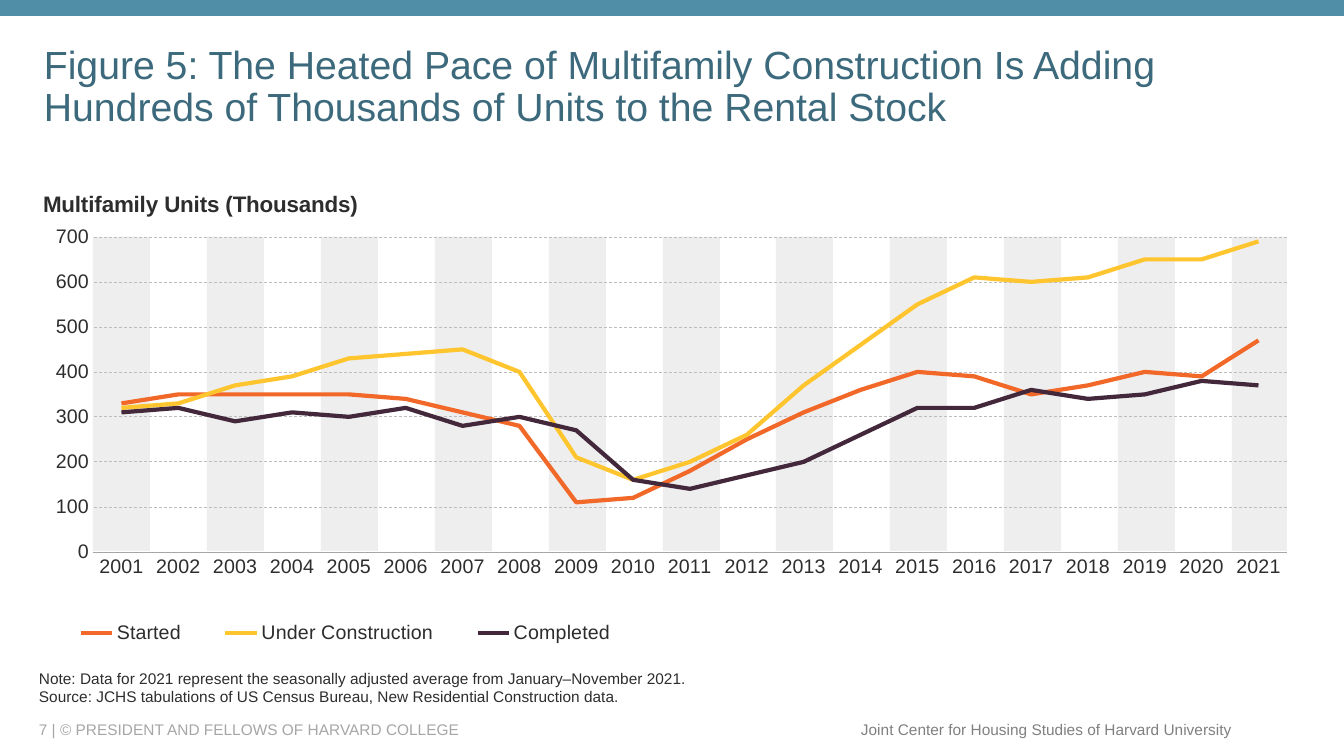
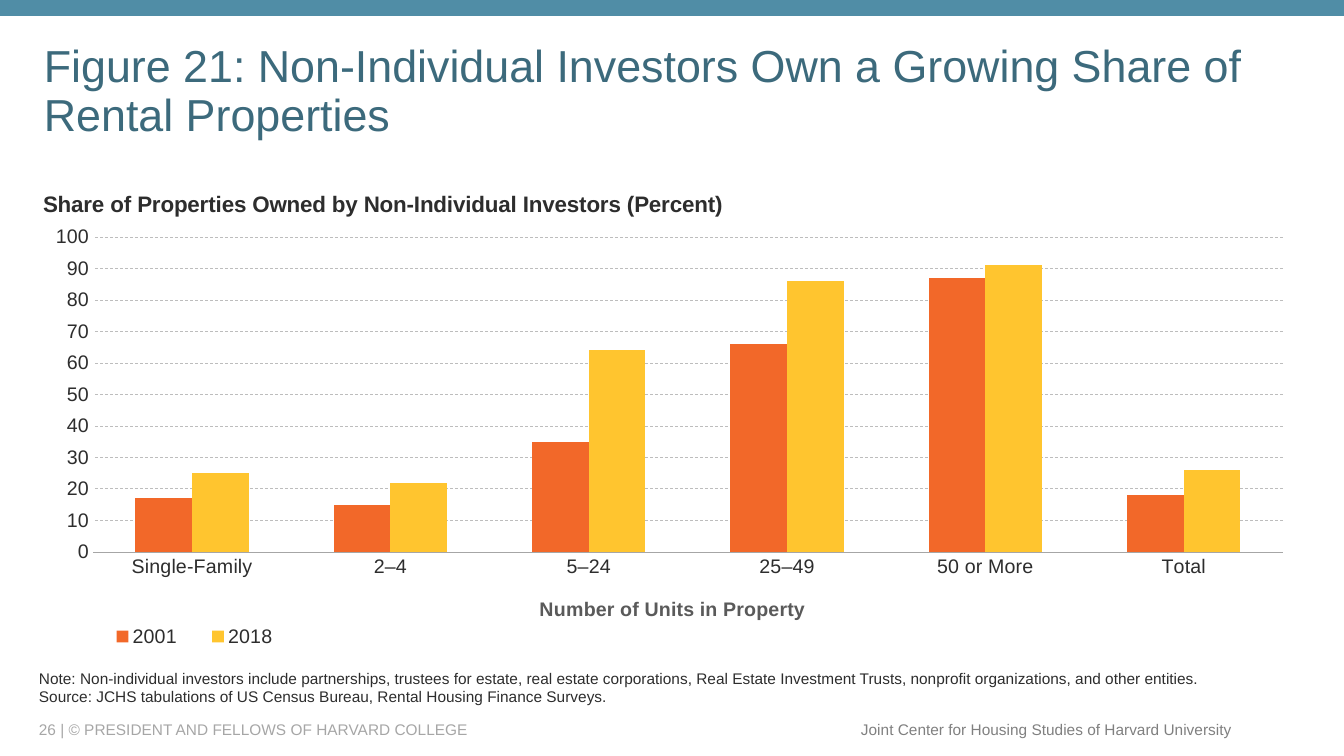
from dataclasses import dataclass

from pptx import Presentation
from pptx.chart.data import CategoryChartData
from pptx.dml.color import RGBColor
from pptx.enum.chart import XL_CHART_TYPE as Kind, XL_LEGEND_POSITION as Spot, XL_TICK_MARK as Tick
from pptx.enum.dml import MSO_LINE as Dash
from pptx.enum.shapes import MSO_SHAPE as Form
from pptx.enum.text import MSO_ANCHOR as Anchor, PP_ALIGN as Align
from pptx.oxml import parse_xml as xml
from pptx.oxml.ns import nsdecls, qn
from pptx.util import Pt

SCALE = 914400 / 100.8


@dataclass(frozen=True)
class Theme:
    face: str = "Arial"
    bar: str = "508DA6"
    title: str = "3C6A7C"
    ink: str = "2D2D2D"
    soft: str = "5A5A5A"
    page: str = "A6A6A6"
    owner: str = "808080"
    axis: str = "A6A6A6"
    grid: str = "BDBDBD"
    band: str = "DEDEDE"
    series: tuple = ("F26829", "FFC52F", "43273B")
    small: int = 11
    base: int = 10
    label: int = 14
    head: int = 16


def px(*nums):
    return [round(n * SCALE) for n in nums]


def apply(item, **vals):
    for key, val in vals.items():
        setattr(item, key, val)


def place(host, prev, box, size, inner=False):
    """Fix a chart part at box (px) inside a chart of the given size (px)."""
    old = host.find(qn("c:layout"))
    if old is not None:
        host.remove(old)
    dims = list(zip("xywh", box, size * 2))
    rows = '<c:layoutTarget val="inner"/>' if inner else ""
    rows += '<c:xMode val="edge"/><c:yMode val="edge"/>'
    rows += "".join(f'<c:{key} val="{num / full:.4f}"/>' for key, num, full in dims)
    node = xml(f'<c:layout {nsdecls("c")}><c:manualLayout>{rows}</c:manualLayout></c:layout>')
    if prev:
        host.find(qn(prev)).addnext(node)
    else:
        host.insert(0, node)


def clear():
    return xml(f'<c:spPr {nsdecls("c", "a")}><a:noFill/><a:ln><a:noFill/></a:ln></c:spPr>')


class Deck:
    def __init__(self, theme):
        self.theme = theme
        self.prs = Presentation()
        self.prs.slide_width, self.prs.slide_height = px(1344, 756)

    def font(self, font, size, color, bold=False):
        apply(font, name=self.theme.face, size=Pt(size), bold=bold)
        font.color.rgb = RGBColor.from_string(color)

    def text(self, box, lines, size, color, anchor=Anchor.MIDDLE, wrap=True, **para):
        frame = self.slide.shapes.add_textbox(*px(*box)).text_frame
        apply(frame, word_wrap=wrap, vertical_anchor=anchor)
        frame.text = "\n".join(lines)
        for row in frame.paragraphs:
            apply(row, **para)
            self.font(row.font, size, color)

    def rect(self, box, color, alpha=None):
        shape = self.slide.shapes.add_shape(Form.RECTANGLE, *px(*box))
        shape.shadow.inherit = False
        shape.fill.solid()
        shape.fill.fore_color.rgb = RGBColor.from_string(color)
        shape.line.fill.background()
        if alpha:
            tint = shape.fill._xPr.find(".//" + qn("a:srgbClr"))
            tint.append(xml(f'<a:alpha {nsdecls("a")} val="{alpha * 1000}"/>'))

    def page(self, num, title, size, top, notes):
        """Start a slide with its title, notes, top bar and footer."""
        look = self.theme
        self.slide = self.prs.slides.add_slide(self.prs.slide_layouts[6])
        self.rect((0, 0, 1344, 16), look.bar)
        self.text((29, 719, 798, 20), [f"{num} | © PRESIDENT AND FELLOWS OF HARVARD COLLEGE"],
                  look.small, look.page)
        self.text((849, 715, 393, 29), ["Joint Center for Housing Studies of Harvard University"],
                  look.small, look.owner, wrap=False, alignment=Align.RIGHT)
        self.text((34, top, 1275, 103), [title], size, look.title, Anchor.BOTTOM, line_spacing=0.9)
        self.text((29, 653, 1184, 58), notes, look.small, look.ink, Anchor.BOTTOM)

    def bands(self, count, left, top, step, width, height, right):
        for i in range(count):
            x = left + round(i * step)
            self.rect((x, top, min(width, right - x), height), self.theme.band, 50)

    def label(self, title, text, size, color, spot, full):
        """Fill and place a chart or axis title."""
        title.text_frame.text = text
        self.font(title.text_frame.paragraphs[0].runs[0].font, size, color, True)
        place(title._element, "c:tx", spot, full)

    def stroke(self, line, color, width, **more):
        line.color.rgb = RGBColor.from_string(color)
        apply(line, width=Pt(width), **more)

    def chart(self, kind, width, title, cats, series, key, top, step, form="General"):
        look, full = self.theme, (width, 482)
        data = CategoryChartData(number_format=form)
        data.categories = cats
        for name, vals in series.items():
            data.add_series(name, vals)
        chart = self.slide.shapes.add_chart(kind, *px(29, 171, *full), data).chart
        self.font(chart.font, look.base, look.soft)
        area = chart._chartSpace.find(qn("c:chart"))
        area.addnext(clear())
        plot = area.find(qn("c:plotArea"))
        plot.append(clear())
        place(plot, None, (64, 66, round(width * 0.933), 315), full, True)
        chart.has_title = True
        self.label(chart.chart_title, title, look.head, look.ink, (10, 15), full)

        chart.has_legend = True
        apply(chart.legend, position=Spot.BOTTOM, include_in_layout=False)
        self.font(chart.legend.font, look.label, look.ink)
        place(chart.legend._element, "c:legendPos", key, full)

        cat, val = chart.category_axis, chart.value_axis
        for axis in (cat, val):
            apply(axis, major_tick_mark=Tick.NONE, minor_tick_mark=Tick.NONE)
            self.font(axis.tick_labels.font, look.label, look.ink)
        self.stroke(cat.format.line, look.axis, 0.5)
        apply(val, minimum_scale=0, maximum_scale=top, major_unit=step, has_major_gridlines=True)
        apply(val.tick_labels, number_format=form, number_format_is_linked=False)
        val.format.line.fill.background()
        self.stroke(val.major_gridlines.format.line, look.grid, 0.5, dash_style=Dash.DASH)

        chart.plots[0].vary_by_categories = False
        for item, color in zip(chart.plots[0].series, look.series):
            if kind == Kind.LINE:
                item.smooth = False
                self.stroke(item.format.line, color, 3)
            else:
                item.format.fill.solid()
                item.format.fill.fore_color.rgb = RGBColor.from_string(color)
        return chart


def units(deck):
    deck.page(7, "Figure 5: The Heated Pace of Multifamily Construction Is Adding "
              "Hundreds of Thousands of Units to the Rental Stock", 28, 32,
              ["Note: Data for 2021 represent the seasonally adjusted average "
               "from January–November 2021.",
               "Source: JCHS tabulations of US Census Bureau, New Residential Construction data."])
    deck.bands(11, 93, 237, 113.9, 57, 314, 1287)
    deck.chart(Kind.LINE, 1280, "Multifamily Units (Thousands)",
               [str(year) for year in range(2001, 2022)], {
                   "Started": (330, 350, 350, 350, 350, 340, 310, 280, 110, 120, 180,
                               250, 310, 360, 400, 390, 350, 370, 400, 390, 470),
                   "Under Construction": (320, 330, 370, 390, 430, 440, 450, 400, 210, 160, 200,
                                          260, 370, 460, 550, 610, 600, 610, 650, 650, 690),
                   "Completed": (310, 320, 290, 310, 300, 320, 280, 300, 270, 160, 140,
                                 170, 200, 260, 320, 320, 360, 340, 350, 380, 370),
               }, (14, 445, 605, 34), 700, 100)


def owners(deck):
    deck.page(26, "Figure 21: Non-Individual Investors Own a Growing Share of Rental Properties",
              32, 43,
              ["Note: Non-individual investors include partnerships, trustees for estate, "
               "real estate corporations, Real Estate Investment Trusts, "
               "nonprofit organizations, and other entities.",
               "Source: JCHS tabulations of US Census Bureau, Rental Housing Finance Surveys."])
    chart = deck.chart(Kind.COLUMN_CLUSTERED, 1275,
                       "Share of Properties Owned by Non-Individual Investors (Percent)",
                       ["Single-Family", "2–4", "5–24", "25–49", "50 or More", "Total"], {
                           "2001": (17, 15, 35, 66, 87, 18),
                           "2018": (25, 22, 64, 86, 91, 26),
                       }, (59, 449, 213, 34), 100, 10, "#,##0")
    apply(chart.plots[0], gap_width=150, overlap=0)
    deck.label(chart.category_axis.axis_title, "Number of Units in Property",
               deck.theme.label, deck.theme.soft, (507, 422), (1275, 482))


def main():
    deck = Deck(Theme())
    units(deck)
    owners(deck)
    deck.prs.save("out.pptx")


if __name__ == "__main__":
    main()
